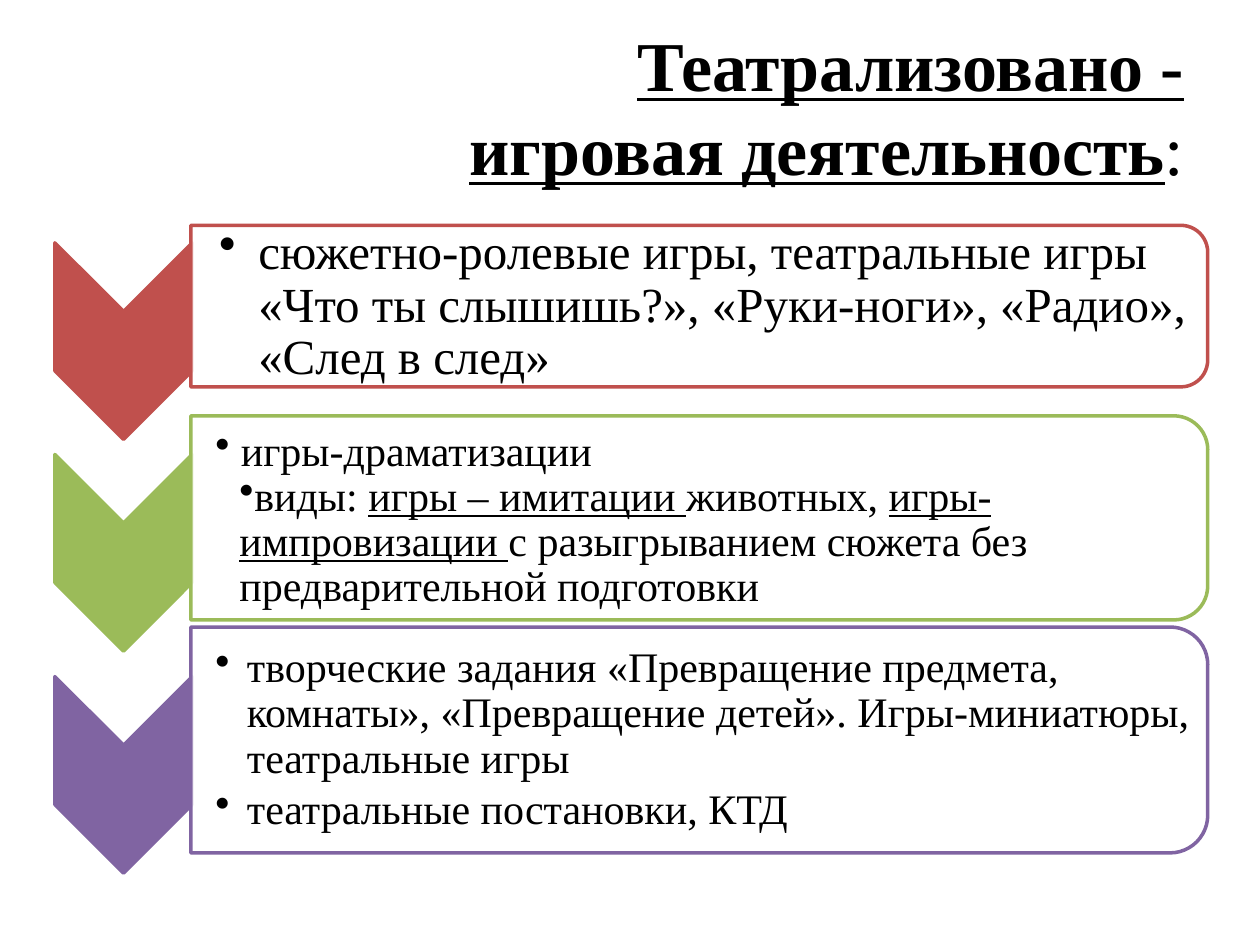
from lxml import etree
from pptx import Presentation
from pptx.dml.color import RGBColor
from pptx.enum.shapes import MSO_SHAPE
from pptx.enum.text import MSO_ANCHOR, PP_ALIGN
from pptx.oxml.ns import qn
from pptx.util import Inches, Pt

CHEVRON = MSO_SHAPE.CHEVRON
CARD = MSO_SHAPE.ROUND_2_SAME_RECTANGLE
MIDDLE = MSO_ANCHOR.MIDDLE
RIGHT = PP_ALIGN.RIGHT


def paint(fill, color):
    fill.solid()
    fill.fore_color.rgb = RGBColor.from_string(color)


def write(para, text, size=24, bold=False, underline=False, color="000000"):
    span = para.add_run()
    span.text = text
    span.font.name = "Times New Roman"
    span.font.size = Pt(size)
    span.font.bold = bold
    span.font.underline = underline
    paint(span.font.fill, color)


deck = Presentation()
deck.slide_width, deck.slide_height = Inches(10), Inches(7.5)
column, row = deck.slide_width / 100, deck.slide_height / 100
page = deck.slides.add_slide(deck.slide_layouts[5])

title = page.shapes.title
title.left, title.top = int(5 * column), int(2.8 * row)
title.width, title.height = int(90 * column), int(16.8 * row)
title.text_frame.vertical_anchor = MIDDLE
para = title.text_frame.paragraphs[0]
para.alignment = RIGHT
write(para, "Театрализовано - игровая\u00a0деятельность", size=40, bold=True, underline=True)
write(para, ":", size=40)

# Each step: colour, centre row, card rows, text size, left inset, paragraphs (margin, indent, spacing, spans)
steps = [
    ("C0504D", 32.4, 17.1, 28, 0.22, [
        (0.31, -0.31, 0.9, [
            ("сюжетно-ролевые игры, театральные игры «Что ты слышишь?», "
             "«Руки-ноги», «Радио», «След в след»", False)]),
    ]),
    ("9BBB59", 54.8, 21.6, 24, 0.19, [
        (0, 0, None, [(" игры-драматизации", False)]),
        (0.19, 0, 0.9, [
            ("виды: ", False), ("игры – имитации ", True), ("животных, ", False),
            ("игры-импровизации ", True),
            ("с разыгрыванием сюжета без предварительной подготовки", False)]),
    ]),
    ("8064A2", 78.3, 23.9, 24, 0.19, [
        (0.25, -0.25, 0.9, [
            ("творческие задания «Превращение предмета, комнаты», "
             "«Превращение детей». Игры-миниатюры, театральные игры", False)]),
        (0.25, -0.25, 0.9, [("театральные постановки, КТД", False)]),
    ]),
]

for color, centre, rows, size, inset, items in steps:
    outlines = [
        (CHEVRON, color, 9.8, centre + 3.7, 10.9 * column, 20.8 * row),
        (CARD, "FFFFFF", 55.5, centre, 80.7 * column, rows * row),
    ]
    for kind, fill, across, down, width, height in outlines:
        left, top = across * column - height / 2, down * row - width / 2
        shape = page.shapes.add_shape(kind, *map(int, (left, top, height, width)))
        shape.rotation = 90
        shape.shadow.inherit = False
        paint(shape.fill, fill)
        paint(shape.line.fill, color)
        shape.line.width = Pt(2)
        if kind == CARD:
            tint = shape.fill._xPr.find(qn("a:solidFill"))[0]
            etree.SubElement(tint, qn("a:alpha"), val="90000")

    height = 0.91 * rows * row
    area = (15.2 * column, centre * row - height / 2, 80 * column, height)
    box = page.shapes.add_textbox(*map(int, area))
    frame = box.text_frame
    frame.word_wrap = True
    frame.vertical_anchor = MIDDLE
    frame.margin_left = Inches(inset)
    frame.margin_top = frame.margin_right = frame.margin_bottom = Inches(0.02)
    for index, (margin, indent, spacing, spans) in enumerate(items):
        para = frame.add_paragraph() if index else frame.paragraphs[0]
        para.level = 1
        properties = para._p.get_or_add_pPr()
        properties.set("marL", str(Inches(margin)))
        properties.set("indent", str(Inches(indent)))
        etree.SubElement(properties, qn("a:buChar"), char="•")
        if spacing:
            para.line_spacing = spacing
            para.space_after = Pt(round(0.15 * size, 1))
        for text, underline in spans:
            write(para, text, size=size, underline=underline)

deck.save("out.pptx")
